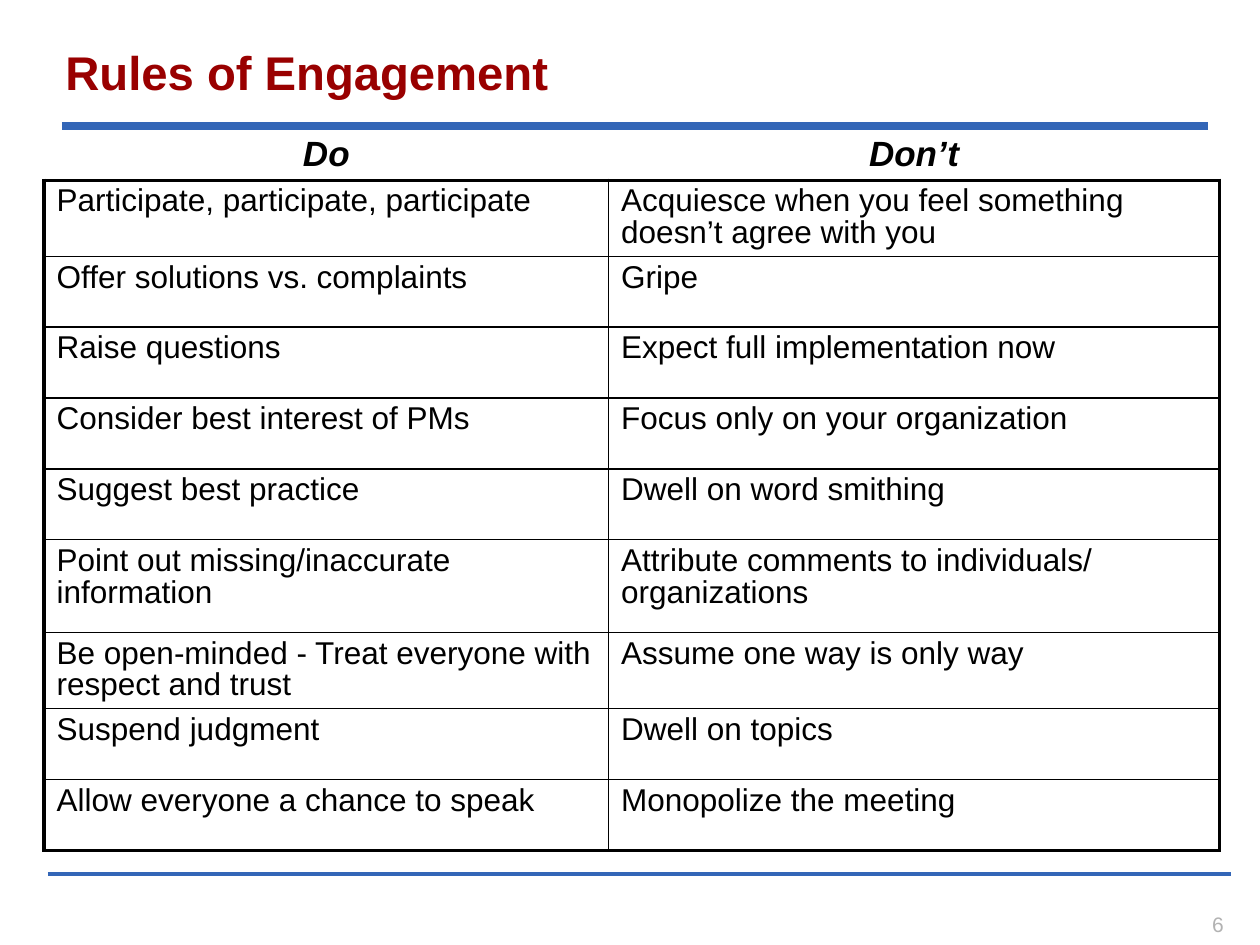
import pptx
import pptx.util
import pptx.dml.color
import pptx.enum.shapes
import pptx.enum.text
import pptx.oxml
import pptx.oxml.ns
from lxml import etree

Pt = pptx.util.Pt
Align = pptx.enum.text.PP_ALIGN
Anchor = pptx.enum.text.MSO_ANCHOR
qn = pptx.oxml.ns.qn

TITLE = "Rules of Engagement"
PAGE = "6"
HEADS = ("Do", "Don’t")
RULES = [
    ("Participate, participate, participate",
     "Acquiesce when you feel something doesn’t agree with you"),
    ("Offer solutions vs. complaints", "Gripe"),
    ("Raise questions", "Expect full implementation now"),
    ("Consider best interest of PMs", "Focus only on your organization"),
    ("Suggest best practice", "Dwell on word smithing"),
    ("Point out missing/inaccurate information",
     "Attribute comments to individuals/ organizations"),
    ("Be open-minded - Treat everyone with respect and trust",
     "Assume one way is only way"),
    ("Suspend judgment", "Dwell on topics"),
    ("Allow everyone a chance to speak", "Monopolize the meeting"),
]
BLACK, RED, BLUE, GRAY = "000000", "990000", "3366B7", "B2B2B2"
LINES = [(35.3, 690.5, 72, 4.5), (27.4, 703.4, 499.7, 2.25)]  # x1, x2, y, width
LEFT, TOP = 25.2, 75.6
COLS = (322.6, 349.2)
HEAD, ROW, TALL = 27.4, 40.5, 53
TALL_ROW = 6
THICK, THIN = 2.25, 1


def color(code):
    return pptx.dml.color.RGBColor.from_string(code)


def style(para, size, code, bold=False, italic=False, align=Align.LEFT):
    font = para.font
    font.name, font.size = "Arial", Pt(size)
    font.bold, font.italic = bold, italic
    font.color.rgb = color(code)
    para.alignment = align


def add_text(slide, text, box, top=0):
    """Add a one-line text box without side margins; return its frame."""
    frame = slide.shapes.add_textbox(*map(Pt, box)).text_frame
    frame.margin_left = frame.margin_right = frame.margin_bottom = 0
    frame.margin_top = Pt(top)
    frame.word_wrap = True
    frame.text = text
    return frame


def add_line(slide, x1, x2, y, width):
    kind = pptx.enum.shapes.MSO_CONNECTOR.STRAIGHT
    line = slide.shapes.add_connector(kind, Pt(x1), Pt(y), Pt(x2), Pt(y))
    line.line.color.rgb = color(BLUE)
    line.line.width = Pt(width)
    etree.SubElement(line._element.spPr, qn("a:effectLst"))


def set_edges(cell, widths):
    """Draw the left, right, top and bottom borders; 0 means none."""
    props = cell._tc.get_or_add_tcPr()
    for spot, (side, width) in enumerate(zip("LRTB", widths)):
        edge = etree.Element(qn(f"a:ln{side}"), w=str(int(Pt(width))))
        if width:
            fill = etree.SubElement(edge, qn("a:solidFill"))
            etree.SubElement(fill, qn("a:srgbClr"), val=BLACK)
        else:
            etree.SubElement(edge, qn("a:noFill"))
        props.insert(spot, edge)


def add_rules(slide):
    rows = [HEADS] + RULES
    last = len(RULES)
    highs = [HEAD] + [TALL if r == TALL_ROW else ROW for r in range(1, last + 1)]
    box = (LEFT, TOP, sum(COLS), sum(highs))
    table = slide.shapes.add_table(len(rows), len(COLS), *map(Pt, box)).table
    table.first_row = table.horz_banding = False
    for col, width in zip(table.columns, COLS):
        col.width = Pt(width)
    for r, (texts, high) in enumerate(zip(rows, highs)):
        table.rows[r].height = Pt(high)
        for c, text in enumerate(texts):
            cell = table.cell(r, c)
            cell.text = text
            cell.fill.background()
            para = cell.text_frame.paragraphs[0]
            para.line_spacing = 0.9
            if r == 0:
                style(para, 20, BLACK, True, True, Align.CENTER)
                set_edges(cell, (0, 0, 0, THICK))
            else:
                style(para, 18, BLACK)
                set_edges(cell, (THIN if c else THICK, THICK if c else THIN,
                                 THICK if r == 1 else THIN,
                                 THICK if r == last else THIN))


def main():
    deck = pptx.Presentation()
    deck.slide_width, deck.slide_height = Pt(720), Pt(540)
    slide = deck.slides.add_slide(deck.slide_layouts[6])
    for line in LINES:
        add_line(slide, *line)
    add_rules(slide)
    title = add_text(slide, TITLE, (37.4, 18.7, 648, 46), top=3)
    title.paragraphs[0].line_spacing = 1.1
    style(title.paragraphs[0], 27, RED, bold=True)
    page = add_text(slide, PAGE, (676, 518, 40, 20))
    page.vertical_anchor = Anchor.MIDDLE
    style(page.paragraphs[0], 12, GRAY, align=Align.CENTER)
    deck.save("out.pptx")


if __name__ == "__main__":
    main()
